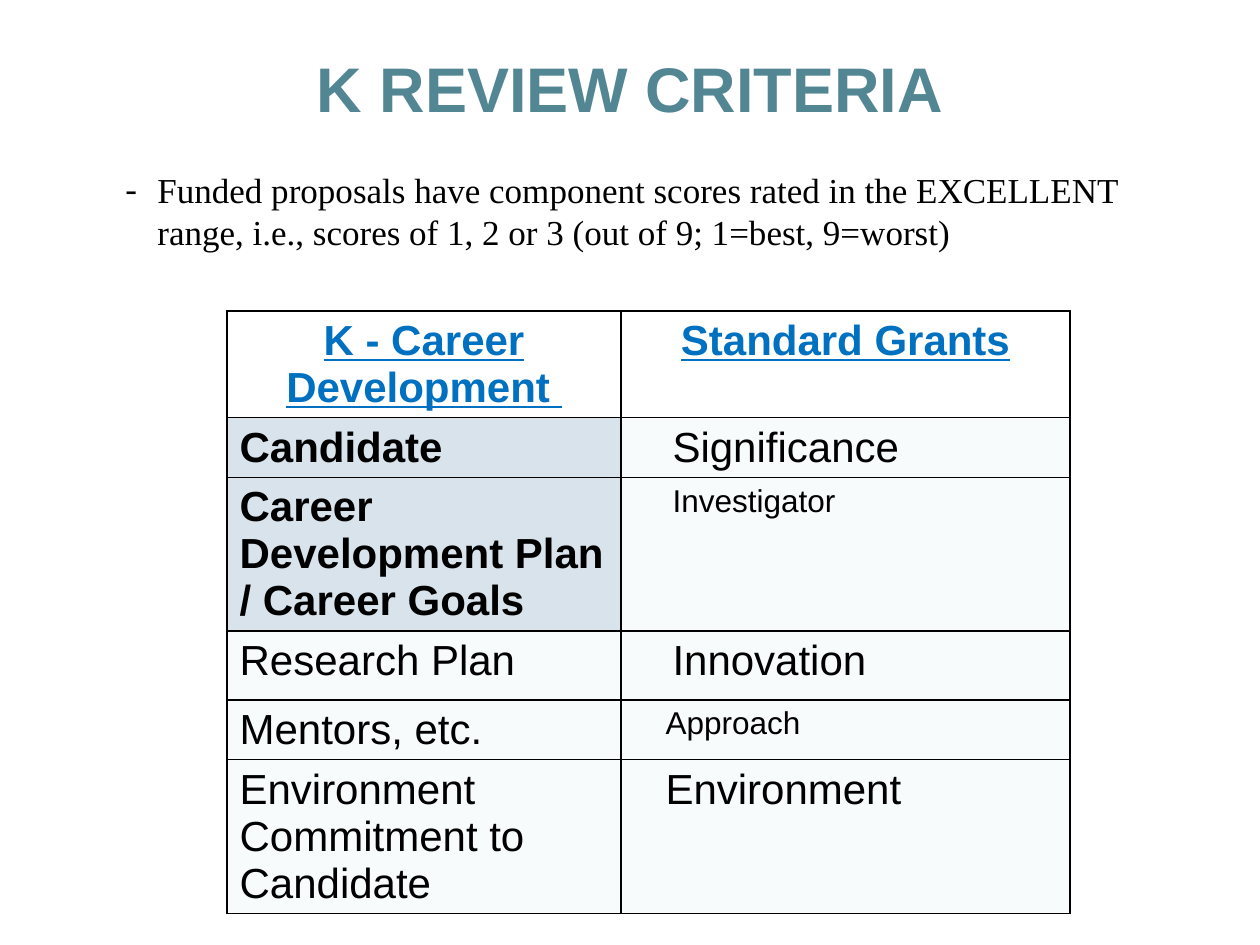
from dataclasses import dataclass

from lxml import etree
from pptx import Presentation
from pptx.dml.color import RGBColor
from pptx.enum.text import MSO_ANCHOR, PP_ALIGN
from pptx.oxml.ns import qn
from pptx.util import Pt

LEFT, CENTER = PP_ALIGN.LEFT, PP_ALIGN.CENTER
TOP, MIDDLE = MSO_ANCHOR.TOP, MSO_ANCHOR.MIDDLE
EMU_PER_PX = 914400 / 126


def px(n):
    return round(n * EMU_PER_PX)


@dataclass(frozen=True)
class Theme:
    sans: str = "Arial"
    serif: str = "Times New Roman"
    title: str = "528693"
    heading: str = "0070C0"
    ink: str = "000000"
    strong_fill: str = "D9E3EB"
    plain_fill: str = "F8FBFB"
    title_pt: int = 36
    table_pt: int = 24
    body_pt: int = 20
    small_pt: int = 18
    border_pt: int = 1
    cell_leading: float = 1.12


def write(tf, text, *, font, size, color, bold=False, underline=False,
          align=LEFT, margin=0, indent=0, bullet=None, leading=None):
    """Fill the first paragraph of a text frame with one formatted run."""
    p = tf.paragraphs[0]
    p.alignment = align
    if leading:
        p.line_spacing = Pt(size * leading)
    pPr = p._p.get_or_add_pPr()
    pPr.set("marL", str(px(margin)))
    pPr.set("indent", str(px(indent)))
    if bullet:
        etree.SubElement(pPr, qn("a:buFont"), typeface=font)
        etree.SubElement(pPr, qn("a:buChar"), char=bullet)
    r = p.add_run()
    r.text = text
    r.font.name = font
    r.font.size = Pt(size)
    r.font.bold = bold
    r.font.underline = underline
    r.font.color.rgb = RGBColor.from_string(color)


class SlideBuilder:
    def __init__(self, prs, theme):
        self.theme = theme
        self.s = prs.slides.add_slide(prs.slide_layouts[6])

    def text(self, box, text, anchor=TOP, **fmt):
        sp = self.s.shapes.add_textbox(*map(px, box))
        tf = sp.text_frame
        tf.word_wrap = True
        tf.vertical_anchor = anchor
        write(tf, text, **fmt)

    def table(self, left, top, widths, heights):
        frame = self.s.shapes.add_table(
            len(heights), len(widths), px(left), px(top),
            px(sum(widths)), px(sum(heights)))
        table = frame.table
        table.first_row = table.horz_banding = False
        for col, width in zip(table.columns, widths):
            col.width = px(width)
        for row, height in zip(table.rows, heights):
            row.height = px(height)
        return table

    def cell(self, cell, text, fill=None, **fmt):
        self.borders(cell)
        if fill:
            cell.fill.solid()
            cell.fill.fore_color.rgb = RGBColor.from_string(fill)
        else:
            cell.fill.background()
        write(cell.text_frame, text, font=self.theme.sans,
              leading=self.theme.cell_leading, **fmt)

    def borders(self, cell):
        tcPr = cell._tc.get_or_add_tcPr()
        for side in ("lnL", "lnR", "lnT", "lnB"):
            ln = etree.SubElement(tcPr, qn(f"a:{side}"),
                                  w=str(Pt(self.theme.border_pt)))
            solid = etree.SubElement(ln, qn("a:solidFill"))
            etree.SubElement(solid, qn("a:srgbClr"), val=self.theme.ink)


def main():
    theme = Theme()
    prs = Presentation()
    prs.slide_width, prs.slide_height = px(1260), px(945)
    slide = SlideBuilder(prs, theme)

    slide.text((63, 19, 1134, 136), "K REVIEW CRITERIA", anchor=MIDDLE,
               font=theme.sans, size=theme.title_pt, color=theme.title,
               bold=True, align=CENTER)

    headings = ("K - Career Development ", "Standard Grants")
    # career criterion, emphasised, standard criterion, its size, its indent
    criteria = (
        ("Candidate", True, "Significance", theme.table_pt, 39),
        ("Career Development Plan / Career Goals", True,
         "Investigator", theme.small_pt, 39),
        ("Research Plan", False, "Innovation", theme.table_pt, 39),
        ("Mentors, etc.", False, "Approach", theme.small_pt, 32),
        ("Environment Commitment to Candidate", False,
         "Environment", theme.table_pt, 32),
    )
    table = slide.table(227, 311, (394, 449), (106, 59, 153, 69, 59, 153))
    for c, heading in enumerate(headings):
        slide.cell(table.cell(0, c), heading, size=theme.table_pt,
                   color=theme.heading, bold=True, underline=True,
                   align=CENTER)
    for i, (career, strong, standard, size, indent) in enumerate(criteria, 1):
        slide.cell(table.cell(i, 0), career, size=theme.table_pt,
                   color=theme.ink, bold=strong,
                   fill=theme.strong_fill if strong else theme.plain_fill)
        slide.cell(table.cell(i, 1), standard, size=size, color=theme.ink,
                   indent=indent, fill=theme.plain_fill)

    slide.text((113, 162, 1070, 97),
               "Funded proposals have component scores rated in the EXCELLENT "
               "range, i.e., scores of 1, 2 or 3 (out of 9; 1=best, 9=worst)",
               font=theme.serif, size=theme.body_pt, color=theme.ink,
               margin=32, indent=-32, bullet="-")

    prs.save("out.pptx")


if __name__ == "__main__":
    main()
